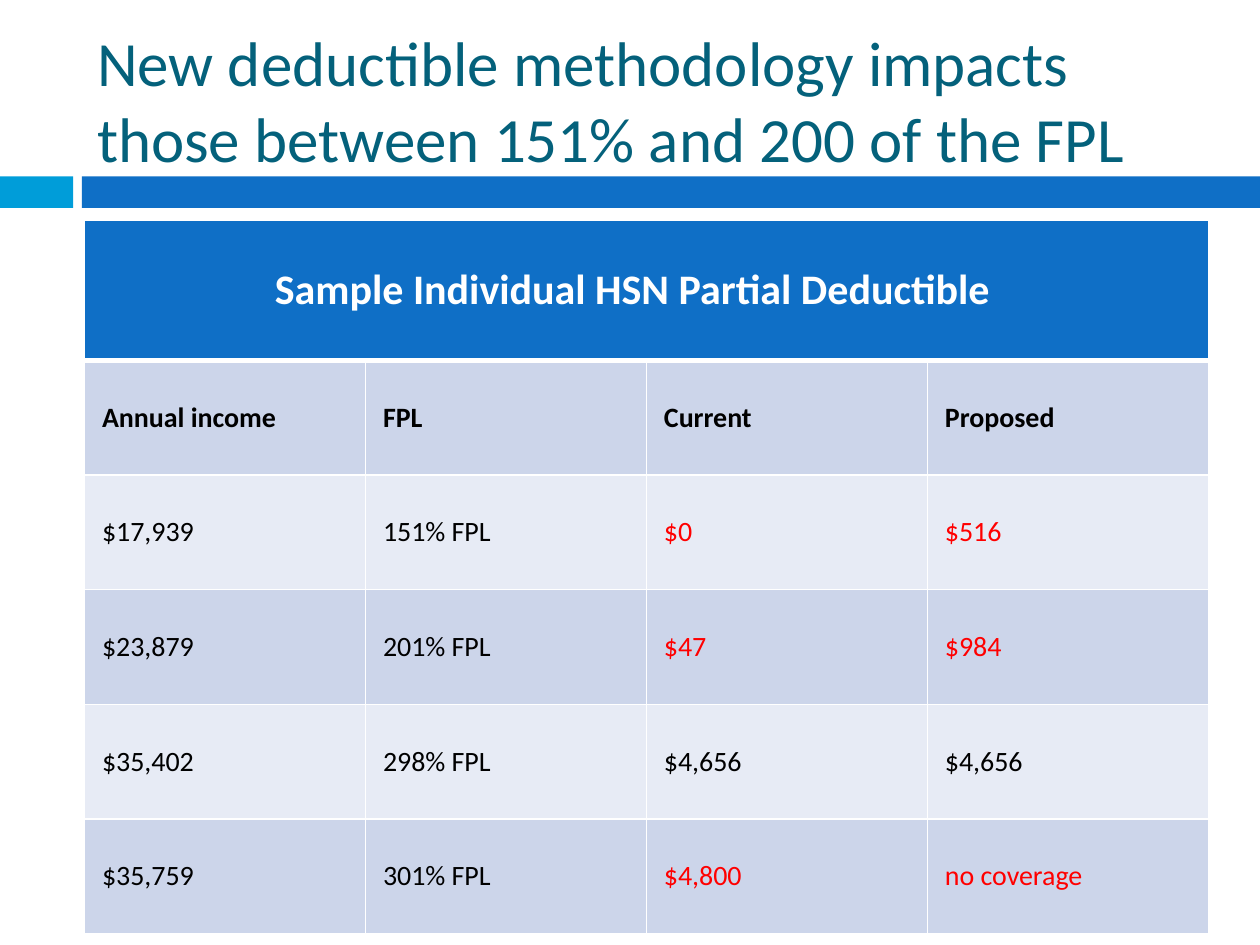
from dataclasses import dataclass

from lxml import etree
from pptx import Presentation
from pptx.dml.color import RGBColor
from pptx.enum.shapes import MSO_SHAPE
from pptx.enum.text import MSO_ANCHOR, MSO_AUTO_SIZE, PP_ALIGN
from pptx.oxml.ns import qn
from pptx.util import Inches, Pt

RECT = MSO_SHAPE.RECTANGLE
MIDDLE = MSO_ANCHOR.MIDDLE
LEFT, CENTER = PP_ALIGN.LEFT, PP_ALIGN.CENTER

WHITE = RGBColor(0xFF, 0xFF, 0xFF)
BLACK = RGBColor(0x00, 0x00, 0x00)
RED = RGBColor(0xFF, 0x00, 0x00)
TEAL = RGBColor(0x04, 0x61, 0x7B)
CYAN = RGBColor(0x00, 0x9D, 0xD9)
BLUE = RGBColor(0x0F, 0x6F, 0xC6)
BANDS = (RGBColor(0xCC, 0xD5, 0xEA), RGBColor(0xE7, 0xEB, 0xF5))

CONTENT_LEFT, CONTENT_WIDTH = 0.67, 8.92
HEADER_HEIGHT, ROW_HEIGHT = 1.11, 0.91


@dataclass
class Bar:
    left: float
    width: float
    color: RGBColor


@dataclass
class Row:
    values: tuple[str, ...]
    changed: bool = False
    bold: bool = False


BARS = (Bar(0, 0.58, CYAN), Bar(0.65, 9.35, BLUE))
ROWS = (
    Row(("Annual income", "FPL", "Current", "Proposed"), bold=True),
    Row(("$17,939", "151% FPL", "$0", "$516"), changed=True),
    Row(("$23,879", "201% FPL", "$47", "$984"), changed=True),
    Row(("$35,402", "298% FPL", "$4,656", "$4,656")),
    Row(("$35,759", "301% FPL", "$4,800", "no coverage"), changed=True),
)


def write(tf, text: str, size: float, color: RGBColor, bold: bool = False,
          align=LEFT) -> None:
    tf.text = text
    p = tf.paragraphs[0]
    p.alignment = align
    font_format = {"name": "Calibri", "size": Pt(size), "bold": bold}
    for r in p.runs:
        for name, value in font_format.items():
            setattr(r.font, name, value)
        r.font.color.rgb = color


def draw_bar(s, bar: Bar) -> None:
    sp = s.shapes.add_shape(RECT, Inches(bar.left), Inches(1.4),
                            Inches(bar.width), Inches(0.25))
    sp.shadow.inherit = False
    sp.fill.solid()
    sp.fill.fore_color.rgb = bar.color
    sp.line.fill.background()


def style_cell(cell, fill: RGBColor, top: float = 1, bottom: float = 1) -> None:
    """Fill the cell, centre it vertically and give it white borders (points)."""
    cell.vertical_anchor = MIDDLE
    cell.margin_left = Inches(0.14)
    tc_pr = cell._tc.get_or_add_tcPr()
    for side, width in {"L": 1, "R": 1, "T": top, "B": bottom}.items():
        ln = etree.SubElement(tc_pr, qn(f"a:ln{side}"), w=str(Pt(width)))
        solid = etree.SubElement(ln, qn("a:solidFill"))
        etree.SubElement(solid, qn("a:srgbClr"), val=str(WHITE))
    cell.fill.solid()
    cell.fill.fore_color.rgb = fill


def draw_title(s) -> None:
    title = s.shapes.title
    title.left, title.top = Inches(CONTENT_LEFT), Inches(0.25)
    title.width, title.height = Inches(CONTENT_WIDTH), Inches(1.08)
    tf = title.text_frame
    tf.word_wrap = True
    tf.auto_size = MSO_AUTO_SIZE.NONE
    tf.vertical_anchor = MIDDLE
    write(tf, "New deductible methodology impacts\v"
              "those between 151% and 200 of the FPL", 36, TEAL)


def draw_table(s) -> None:
    columns = len(ROWS[0].values)
    height = HEADER_HEIGHT + ROW_HEIGHT * len(ROWS)
    table = s.shapes.add_table(len(ROWS) + 1, columns, Inches(CONTENT_LEFT),
                               Inches(1.75), Inches(CONTENT_WIDTH),
                               Inches(height)).table
    for i, table_row in enumerate(table.rows):
        table_row.height = Inches(ROW_HEIGHT if i else HEADER_HEIGHT)

    header = table.cell(0, 0)
    header.merge(table.cell(0, columns - 1))
    for j in range(columns):
        style_cell(table.cell(0, j), BLUE, bottom=3)
    header.margin_right = Inches(0.36)
    write(header.text_frame, "Sample Individual HSN Partial Deductible",
          24, WHITE, True, CENTER)

    for i, row in enumerate(ROWS):
        for j, value in enumerate(row.values):
            cell = table.cell(i + 1, j)
            style_cell(cell, BANDS[i % 2], top=1 if i else 3)
            color = RED if row.changed and j >= 2 else BLACK
            write(cell.text_frame, value, 16, color, row.bold)


def main() -> None:
    prs = Presentation()
    prs.slide_width, prs.slide_height = Inches(10), Inches(7.5)
    s = prs.slides.add_slide(prs.slide_layouts[5])
    for bar in BARS:
        draw_bar(s, bar)
    draw_title(s)
    draw_table(s)
    prs.save("out.pptx")


if __name__ == "__main__":
    main()
